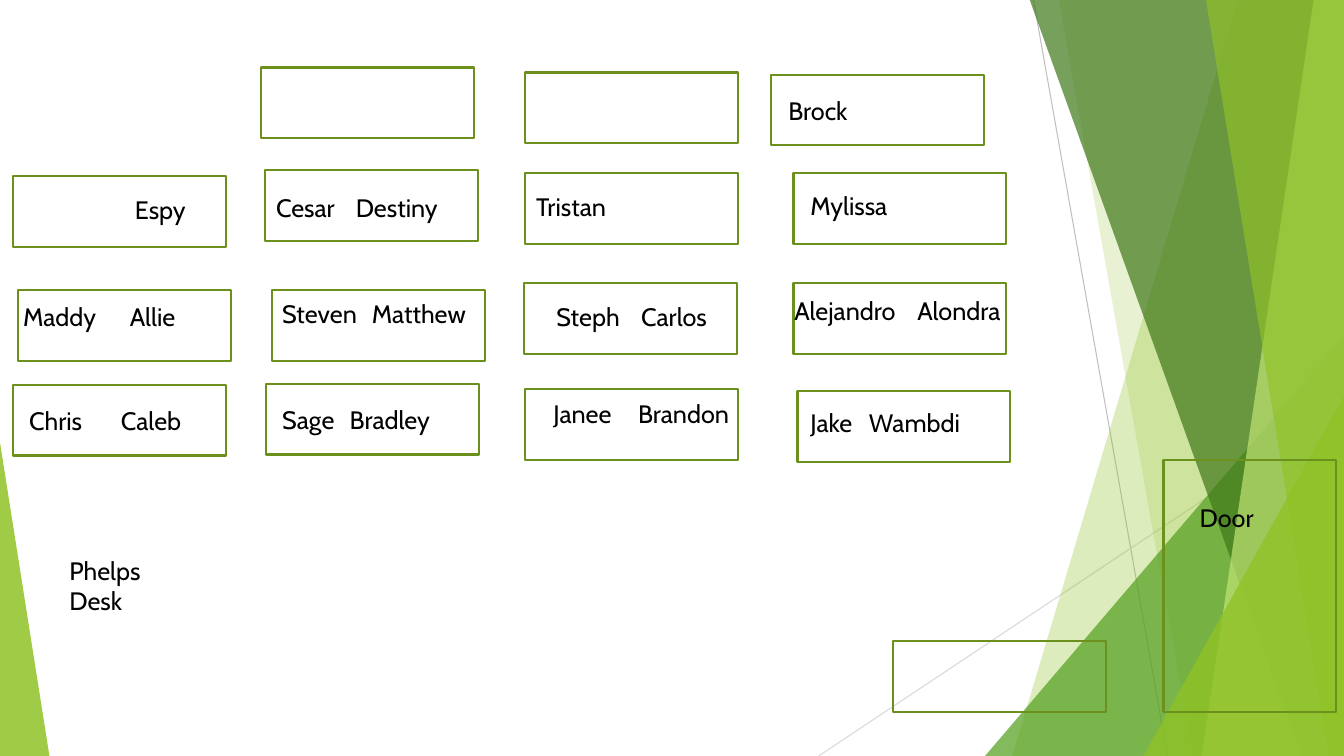
from dataclasses import dataclass

from lxml import etree
from pptx import Presentation
from pptx.dml.color import RGBColor
from pptx.enum.shapes import MSO_CONNECTOR, MSO_SHAPE
from pptx.enum.text import MSO_ANCHOR, MSO_AUTO_SIZE
from pptx.oxml.ns import qn
from pptx.util import Inches, Pt

RECTANGLE = MSO_SHAPE.RECTANGLE
TRIANGLE = MSO_SHAPE.ISOSCELES_TRIANGLE
STRAIGHT = MSO_CONNECTOR.STRAIGHT
TOP = MSO_ANCHOR.TOP
GROW = MSO_AUTO_SIZE.SHAPE_TO_FIT_TEXT
BLANK_LAYOUT = 6


@dataclass(frozen=True)
class Theme:
    font: str = "Cabin"
    text_size: float = 18
    text: str = "000000"
    outline: str = "6B901C"
    outline_width: float = 1.5
    hairline_width: float = 0.75
    dark_hairline: str = "BFBFBF"
    light_hairline: str = "D9D9D9"
    lime: str = "90C226"
    green: str = "54A021"
    forest: str = "3F7819"
    pale: str = "C0E474"


THEME = Theme()
WIDTH, HEIGHT = 13.33, 7.5
DESK_SIZE = (2.11, 0.7)
LABEL_HEIGHT = 0.4

# Top left corners of the desks, row by row
DESKS = [
    (2.59, 0.67), (5.21, 0.72), (7.65, 0.74),
    (0.13, 1.75), (2.63, 1.69), (5.21, 1.72), (7.87, 1.72),
    (0.18, 2.88), (2.7, 2.88), (5.2, 2.81), (7.87, 2.81),
    (0.13, 3.82), (2.64, 3.81), (5.21, 3.86), (7.91, 3.88),
    (8.86, 6.36),
]

# Left, top, width, text, tab stop of the right-hand seat
LABELS = [
    (7.72, 0.9, 1.98, "Brock", None),
    (0.25, 1.88, 1.98, "\tEspy", 0.99),
    (2.64, 1.86, 1.98, "Cesar\tDestiny", 0.79),
    (5.22, 1.85, 2.18, "Tristan", None),
    (7.94, 1.84, 1.98, "Mylissa", None),
    (0.13, 2.94, 1.98, "Maddy\tAllie", 1.06),
    (2.7, 2.91, 2.18, "Steven\tMatthew", 0.89),
    (5.42, 2.94, 1.98, "Steph\tCarlos", 0.84),
    (7.78, 2.88, 2.5, "Alejandro\tAlondra", 1.22),
    (0.19, 3.97, 1.98, "Chris\tCaleb", 0.91),
    (2.7, 3.96, 1.98, "Sage\tBradley", 0.67),
    (5.39, 3.9, 2.26, "Janee\tBrandon", 0.84),
    (7.94, 3.99, 1.98, "Jake\tWambdi", 0.58),
    (11.8, 4.93, 1.45, "Door", None),
    (0.59, 5.46, 1.06, "Phelps\nDesk", None),
]


def set_all(target, values):
    for name, value in values.items():
        setattr(target, name, value)


def paint(shape, color, opacity):
    """Fill a shape with a see-through colour and no outline."""
    shape.shadow.inherit = False
    shape.line.fill.background()
    shape.fill.solid()
    shape.fill.fore_color.rgb = RGBColor.from_string(color)
    color_element = shape._element.spPr.find(".//" + qn("a:srgbClr"))
    etree.SubElement(color_element, qn("a:alpha"), val=str(opacity * 1000))


def add_hairline(slide, start, end, color):
    line = slide.shapes.add_connector(STRAIGHT, *map(Inches, start + end))
    line.line.color.rgb = RGBColor.from_string(color)
    line.line.width = Pt(THEME.hairline_width)
    etree.SubElement(line._element.spPr, qn("a:effectLst"))


def add_band(slide, top_left, bottom_left, color, opacity):
    """Add a band that runs from a slanted left edge to the slide's right side."""
    top = -0.01
    corners = [(WIDTH, top), (WIDTH, HEIGHT), (bottom_left, HEIGHT)]
    builder = slide.shapes.build_freeform(Inches(top_left), Inches(top))
    builder.add_line_segments([(Inches(x), Inches(y)) for x, y in corners])
    paint(builder.convert_to_shape(), color, opacity)


def add_corner(slide, left, top, width, peak, color, opacity):
    """Add a right-angled triangle that stands on the slide's bottom edge."""
    box = map(Inches, (left, top, width, HEIGHT - top))
    triangle = slide.shapes.add_shape(TRIANGLE, *box)
    triangle.adjustments[0] = peak
    paint(triangle, color, opacity)


def add_outline(slide, position, size):
    box = slide.shapes.add_shape(RECTANGLE, *map(Inches, position + size))
    box.shadow.inherit = False
    box.fill.background()
    box.line.color.rgb = RGBColor.from_string(THEME.outline)
    box.line.width = Pt(THEME.outline_width)


def add_tab_stop(paragraph, position):
    tab_list = etree.SubElement(paragraph._p.get_or_add_pPr(), qn("a:tabLst"))
    etree.SubElement(tab_list, qn("a:tab"), pos=str(Inches(position)), algn="l")


def add_label(slide, left, top, width, text, tab_stop):
    lines = text.split("\n")
    height = LABEL_HEIGHT + 0.31 * (len(lines) - 1)
    label = slide.shapes.add_textbox(*map(Inches, (left, top, width, height)))
    frame = label.text_frame
    set_all(frame, {"word_wrap": True, "auto_size": GROW, "vertical_anchor": TOP})
    frame.text = text
    for paragraph in frame.paragraphs:
        if tab_stop is not None:
            add_tab_stop(paragraph, tab_stop)
        for run in paragraph.runs:
            set_all(run.font, {"name": THEME.font, "size": Pt(THEME.text_size)})
            run.font.color.rgb = RGBColor.from_string(THEME.text)


def add_backdrop(slide):
    add_hairline(slide, (10.25, 0), (11.58, HEIGHT), THEME.dark_hairline)
    add_hairline(slide, (WIDTH, 4.03), (8.12, HEIGHT), THEME.light_hairline)
    add_band(slide, 12.28, 10.04, THEME.lime, 30)
    add_band(slide, 10.5, 11.83, THEME.lime, 20)
    add_corner(slide, 9.77, 3.33, 3.56, 1, THEME.green, 72)
    add_band(slide, 10.21, 12.91, THEME.forest, 70)
    add_band(slide, 13.03, 11.92, THEME.pale, 70)
    add_band(slide, 11.96, 13.18, THEME.lime, 65)
    add_corner(slide, 11.34, 3.93, 1.99, 1, THEME.lime, 80)
    add_corner(slide, 0, 4.39, 0.49, 0, THEME.lime, 85)


def main():
    presentation = Presentation()
    set_all(presentation, {"slide_width": Inches(WIDTH), "slide_height": Inches(HEIGHT)})
    slide = presentation.slides.add_slide(presentation.slide_layouts[BLANK_LAYOUT])

    # Green facets behind the seating plan
    add_backdrop(slide)

    # Desks and door
    for position in DESKS:
        add_outline(slide, position, DESK_SIZE)
    add_outline(slide, (11.54, 4.56), (1.71, 2.5))

    # Names
    for label in LABELS:
        add_label(slide, *label)

    presentation.save("out.pptx")


if __name__ == "__main__":
    main()
